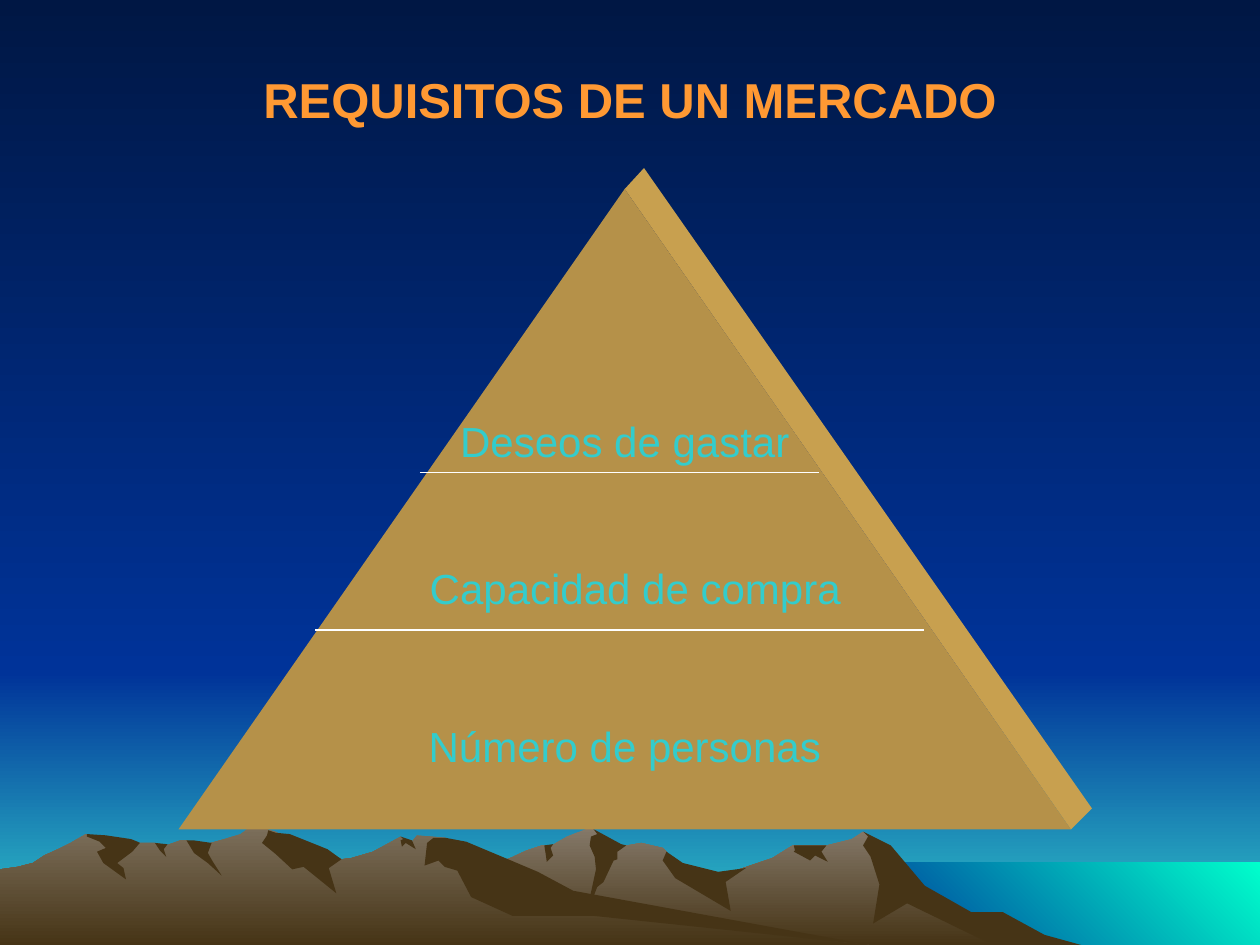
import pptx
import pptx.dml.color
import pptx.enum.shapes
import pptx.enum.text
import pptx.util
from lxml import etree

Pt = pptx.util.Pt
RGB = pptx.dml.color.RGBColor
SHAPE = pptx.enum.shapes.MSO_SHAPE

NIGHT, BLUE, AQUA = RGB(0x00, 0x17, 0x44), RGB(0x00, 0x33, 0x99), RGB(0x33, 0xCC, 0xCC)
MINT, EARTH = RGB(0x00, 0xFF, 0xCC), RGB(0x46, 0x34, 0x16)
NEAR_ROCK, FAR_ROCK = RGB(0x7B, 0x6E, 0x5A), RGB(0x84, 0x78, 0x68)
FRONT, SIDE = RGB(0xB5, 0x91, 0x49), RGB(0xC8, 0xA0, 0x4F)
ORANGE, WHITE = RGB(0xFF, 0x99, 0x33), RGB(0xFF, 0xFF, 0xFF)
FONT = "Arial"
W, H = 720, 540
UNIT = Pt(0.72)  # landscape outlines are in hundredths of an inch
DOWN, UP_RIGHT = 270, 45  # gradient directions

# Backdrop bands: left, top, width, height, colours, direction
BANDS = [
    (0, 384, W, 156, (BLUE, AQUA), DOWN),
    (0, 0, W, 384, (NIGHT, BLUE), DOWN),
    (492, 493, 228, 47, (BLUE, MINT), UP_RIGHT),
]

# Mountains, back to front: colours, outline
FAR_RIDGE = [
    (802, 740), (778, 727), (764, 723), (723, 698), (702, 671), (685, 660), (676, 666),
    (656, 671), (629, 671), (613, 681), (566, 697), (536, 690), (529, 676), (526, 673),
    (509, 669), (486, 673), (474, 661), (471, 658), (465, 658), (450, 664), (438, 671),
    (430, 671), (418, 675), (405, 681), (394, 685), (355, 698), (327, 709), (277, 739),
    (258, 750), (820, 750)]
NEAR_RIDGE = [
    (690, 750), (667, 748), (432, 712), (354, 665), (331, 663), (327, 668), (323, 668),
    (318, 664), (296, 676), (279, 681), (271, 682), (260, 676), (236, 681), (223, 663),
    (219, 660), (212, 658), (196, 658), (191, 662), (178, 666), (160, 671), (148, 667),
    (143, 667), (132, 671), (123, 669), (111, 669), (94, 671), (68, 662), (56, 669),
    (46, 674), (35, 679), (26, 685), (14, 688), (0, 690), (0, 750)]
FAR_SHADOWS = [
    [(796, 724), (771, 724), (734, 703), (707, 671), (685, 660), (689, 664), (685, 671),
     (691, 680), (698, 702), (693, 733), (720, 717), (788, 750), (858, 750), (829, 742)],
    [(471, 658), (474, 662), (469, 664), (468, 671), (472, 680), (473, 690), (465, 727),
     (474, 704), (479, 700), (487, 683), (490, 682), (490, 676), (497, 671), (493, 670)],
    [(529, 676), (526, 683), (536, 697), (580, 723), (576, 700), (592, 689), (570, 692),
     (542, 685)],
    [(650, 671), (630, 671), (631, 675), (630, 676), (643, 683), (647, 679), (657, 684),
     (652, 676), (656, 671)],
    [(433, 677), (432, 671), (439, 670), (437, 673), (439, 679), (434, 684)],
]
NEAR_SHADOWS = [
    [(212, 663), (208, 669), (219, 678), (232, 690), (241, 688), (267, 709), (261, 689),
     (271, 682), (260, 674), (245, 668), (230, 662), (219, 661), (213, 659)],
    [(370, 668), (354, 665), (344, 665), (339, 669), (337, 687), (348, 683), (353, 688),
     (363, 691), (374, 712), (407, 727), (472, 727), (690, 750), (455, 707), (427, 692),
     (401, 681)],
    [(318, 667), (320, 666), (318, 664), (327, 667), (330, 674), (322, 669), (319, 672)],
    [(154, 667), (168, 669), (165, 677), (169, 684), (176, 695), (165, 685), (154, 677),
     (148, 667)],
    [(133, 670), (130, 674), (132, 680), (127, 675), (123, 669)],
    [(109, 668), (111, 669), (105, 676), (93, 685), (98, 689), (100, 698), (82, 685),
     (77, 676), (84, 673), (79, 668), (69, 664), (69, 662), (84, 663), (104, 666)],
]
MOUNTAINS = (
    [((FAR_ROCK, EARTH), FAR_RIDGE)] + [((EARTH,), s) for s in FAR_SHADOWS]
    + [((NEAR_ROCK, EARTH), NEAR_RIDGE)] + [((EARTH,), s) for s in NEAR_SHADOWS])

# Pyramid: left, top, width, height and depth of its side
PYRAMID = (102, 108, 510, 366)
DEPTH = 11.5

# Texts: wording, left, top, width, height, size, bold, colour
TEXTS = [
    ("REQUISITOS DE UN MERCADO", 108, 36, 504, 41, 28, True, ORANGE),
    ("Deseos de gastar", 192, 234, 330, 36, 24, False, AQUA),
    ("Capacidad de compra", 198, 318, 330, 36, 24, False, AQUA),
    ("Número de personas", 192, 408, 330, 36, 24, False, AQUA),
]

# Dividers: left, right, height on the slide
DIVIDERS = [(240, 468, 270), (180, 528, 360)]


def paint(fill, colours, angle=DOWN):
    if len(colours) == 1:
        fill.solid()
        fill.fore_color.rgb = colours[0]
        return
    fill.gradient()
    fill.gradient_angle = angle
    for stop, colour in zip(fill.gradient_stops, colours):
        stop.color.rgb = colour


def finish(sp, colours, angle=DOWN):
    sp.shadow.inherit = False
    sp.line.fill.background()
    paint(sp.fill, colours, angle)


def add_preset(s, kind, box, colours, angle=DOWN):
    sp = s.shapes.add_shape(kind, *map(Pt, box))
    finish(sp, colours, angle)


def add_outline(s, points, colours, scale):
    builder = s.shapes.build_freeform(*points[0], scale=scale)
    builder.add_line_segments(points[1:], close=True)
    finish(builder.convert_to_shape(), colours)


def add_text(s, text, x, y, w, h, size, bold, colour):
    tf = s.shapes.add_textbox(Pt(x), Pt(y), Pt(w), Pt(h)).text_frame
    tf.word_wrap = True
    p = tf.paragraphs[0]
    p.text = text
    p.alignment = pptx.enum.text.PP_ALIGN.CENTER
    font = p.runs[0].font
    font.name, font.size, font.bold = FONT, Pt(size), bold
    font.color.rgb = colour


def add_divider(s, left, right, y):
    line = s.shapes.add_connector(
        pptx.enum.shapes.MSO_CONNECTOR.STRAIGHT, Pt(left), Pt(y), Pt(right), Pt(y))
    line.line.color.rgb = WHITE
    line.line.width = Pt(0.75)
    etree.SubElement(line._element.spPr, pptx.oxml.ns.qn("a:effectLst"))


def main():
    prs = pptx.Presentation()
    prs.slide_width, prs.slide_height = Pt(W), Pt(H)
    s = prs.slides.add_slide(prs.slide_layouts[6])
    paint(s.background.fill, (NIGHT, BLUE))

    # Landscape
    for *box, colours, angle in BANDS:
        add_preset(s, SHAPE.RECTANGLE, box, colours, angle)
    for colours, outline in MOUNTAINS:
        add_outline(s, outline, colours, UNIT)

    # Pyramid with its side face
    x, y, w, h = PYRAMID
    apex, corner = (x + w / 2, y), (x + w, y + h)
    back = [(px + DEPTH, py - DEPTH) for px, py in (corner, apex)]
    add_outline(s, [apex, corner, *back], (SIDE,), Pt(1))
    add_preset(s, SHAPE.ISOSCELES_TRIANGLE, PYRAMID, (FRONT,))

    # Title, levels and dividers
    for text in TEXTS:
        add_text(s, *text)
    for divider in DIVIDERS:
        add_divider(s, *divider)

    prs.save("out.pptx")


if __name__ == "__main__":
    main()
